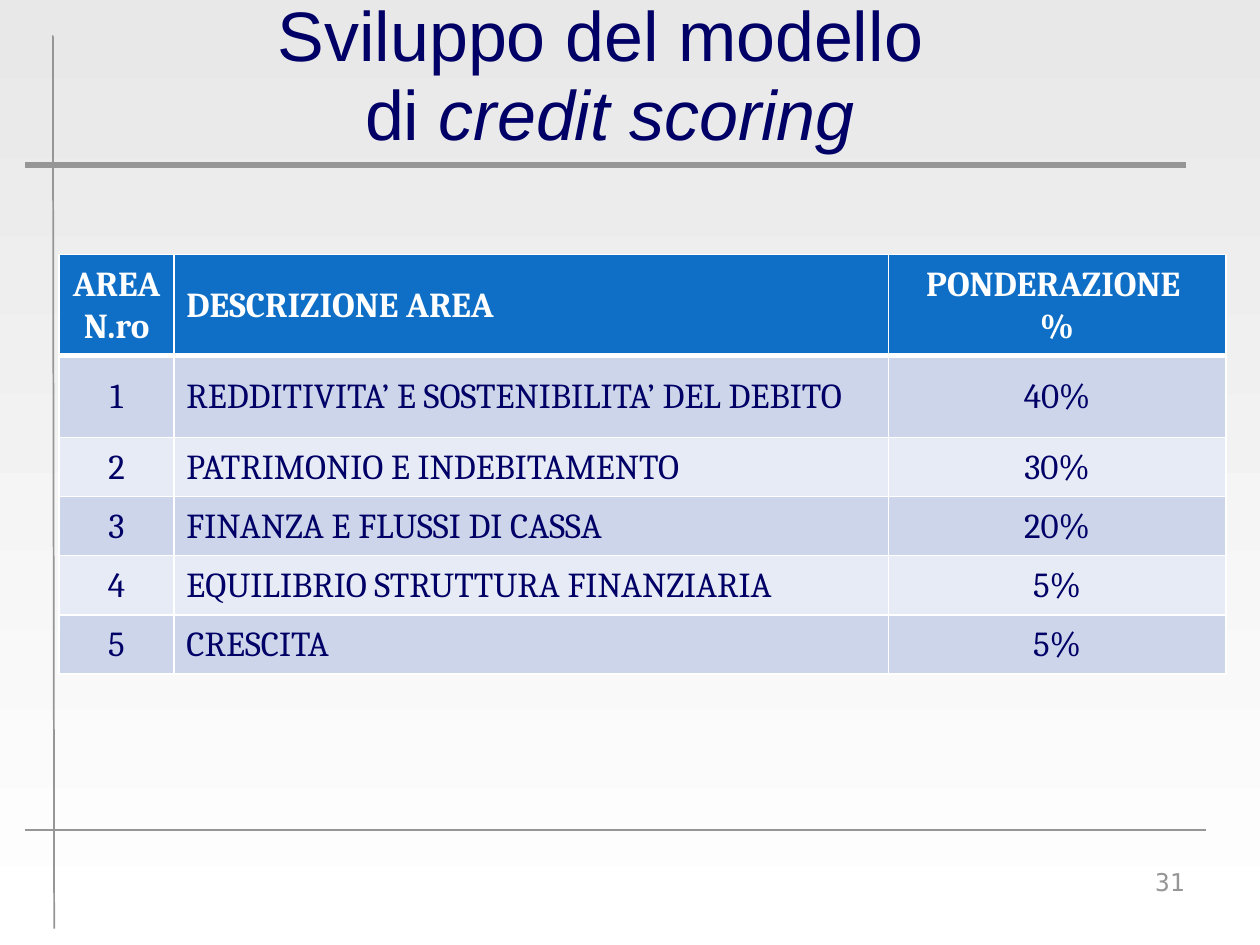
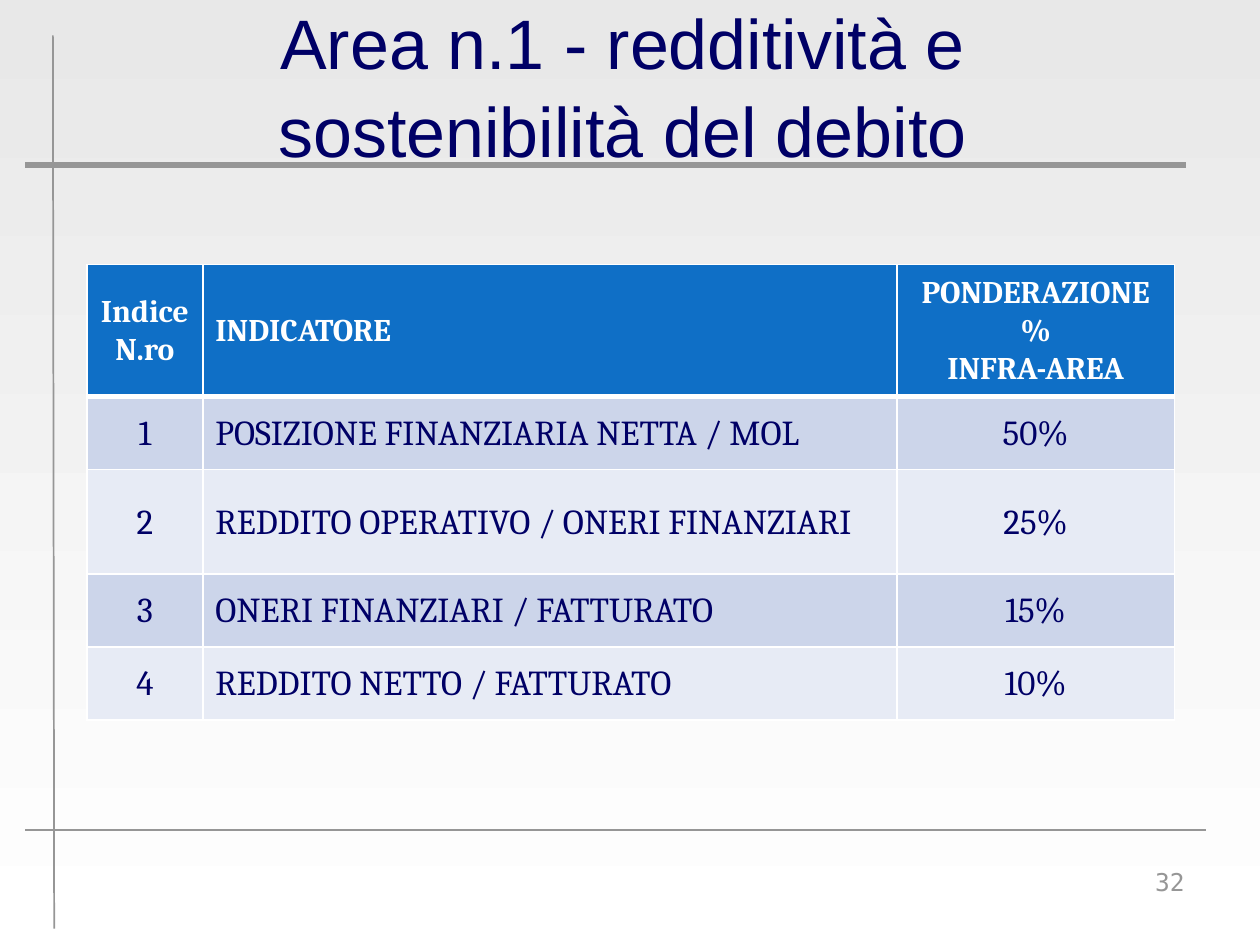
"""Build two slides on the credit scoring model: areas and indicators with their weights."""
import pptx
import pptx.dml.color
import pptx.enum.shapes
import pptx.enum.text
import pptx.oxml
import pptx.oxml.ns
import pptx.util

Inches = pptx.util.Inches
Pt = pptx.util.Pt
RGBColor = pptx.dml.color.RGBColor
Align = pptx.enum.text.PP_ALIGN
Anchor = pptx.enum.text.MSO_ANCHOR

NAVY = RGBColor(0x00, 0x00, 0x66)
GREY = RGBColor(0x96, 0x96, 0x96)
WHITE = RGBColor(0xFF, 0xFF, 0xFF)
PALE_GREY = RGBColor(0xE8, 0xE8, 0xE8)
HEADER_BLUE = RGBColor(0x0F, 0x6F, 0xC6)
BANDS = [RGBColor(0xCC, 0xD5, 0xEA), RGBColor(0xE7, 0xEB, 0xF5)]

TITLE_FONT = "Arial"
TABLE_FONT = "Cambria"
NUMBER_FONT = "DejaVu Sans Mono"
BODY_SIZE = 20
COLUMN_ALIGNMENTS = [Align.CENTER, Align.JUSTIFY, Align.CENTER]
FRAME_LINES = [
    (0.2, 1.31, 9.41, 1.31, 3),
    (0.2, 6.59, 9.57, 6.59, 1),
    (0.43, 7.37, 0.42, 0.28, 1),
]

AREAS = [
    ["AREA N.ro", "DESCRIZIONE AREA", "PONDERAZIONE \n%"],
    ["1", "REDDITIVITA’ E SOSTENIBILITA’ DEL DEBITO", "40%"],
    ["2", "PATRIMONIO E INDEBITAMENTO", "30%"],
    ["3", "FINANZA E FLUSSI DI CASSA", "20%"],
    ["4", "EQUILIBRIO STRUTTURA FINANZIARIA", "5%"],
    ["5", "CRESCITA", "5%"],
]
INDICATORS = [
    ["Indice N.ro", "INDICATORE", "PONDERAZIONE %\nINFRA-AREA"],
    ["1", "POSIZIONE FINANZIARIA NETTA / MOL", "50%"],
    ["2", "REDDITO OPERATIVO / ONERI FINANZIARI", "25%"],
    ["3", "ONERI FINANZIARI / FATTURATO", "15%"],
    ["4", "REDDITO NETTO / FATTURATO", "10%"],
]


def style_font(font, name, size, color, bold=False):
    """Set the typeface, size, colour and weight of a font."""
    font.name = name
    font.size = Pt(size)
    font.color.rgb = color
    font.bold = bold


def add_line(page, left, top, right, bottom, width):
    """Draw one grey line of the page frame."""
    line = page.shapes.add_connector(
        pptx.enum.shapes.MSO_CONNECTOR.STRAIGHT,
        Inches(left), Inches(top), Inches(right), Inches(bottom))
    line.line.color.rgb = GREY
    line.line.width = Pt(width)
    line._element.spPr.append(pptx.oxml.parse_xml(
        f'<a:effectLst {pptx.oxml.ns.nsdecls("a")}/>'))


def add_text_box(page, left, top, width, height):
    """Add an empty wrapping text box."""
    box = page.shapes.add_textbox(Inches(left), Inches(top), Inches(width), Inches(height))
    box.text_frame.word_wrap = True
    return box


def add_page(deck, number):
    """Add a page with the shared gradient, frame lines and page number."""
    page = deck.slides.add_slide(deck.slide_layouts[6])
    fill = page.background.fill
    fill.gradient()
    fill.gradient_angle = 270
    for stop, position, color in zip(fill.gradient_stops, (0, 1), (PALE_GREY, WHITE)):
        stop.position = position
        stop.color.rgb = color
    for frame_line in FRAME_LINES:
        add_line(page, *frame_line)
    box = add_text_box(page, 7.17, 6.83, 2.33, 0.52)
    box.text_frame.text = str(number)
    para = box.text_frame.paragraphs[0]
    para.alignment = Align.RIGHT
    style_font(para.runs[0].font, NUMBER_FONT, 14, GREY)
    return page


def add_title(page, place, text, line_spacing, italic_text=""):
    """Add the centred title, with an optional italic ending."""
    frame = add_text_box(page, *place).text_frame
    frame.vertical_anchor = Anchor.MIDDLE
    frame.margin_bottom = Inches(0.68)
    frame.text = text
    para = frame.paragraphs[0]
    para.alignment = Align.CENTER
    para.line_spacing = line_spacing
    if italic_text:
        span = para.add_run()
        span.text = italic_text
        span.font.italic = True
    for span in para.runs:
        style_font(span.font, TITLE_FONT, 40, NAVY)


def set_borders(cell, top_width, bottom_width):
    """Give a cell white borders."""
    properties = cell._tc.get_or_add_tcPr()
    for side, width in zip("LRTB", (1, 1, top_width, bottom_width)):
        properties.append(pptx.oxml.parse_xml(
            f'<a:ln{side} {pptx.oxml.ns.nsdecls("a")} w="{Pt(width)}">'
            f'<a:solidFill><a:srgbClr val="{WHITE}"/></a:solidFill></a:ln{side}>'))


def fill_cell(cell, text, row, alignment, header_size):
    """Write and format one table cell according to its row."""
    is_header = row == 0
    set_borders(cell, 3 if row == 1 else 1, 3 if is_header else 1)
    cell.fill.solid()
    cell.fill.fore_color.rgb = HEADER_BLUE if is_header else BANDS[(row - 1) % 2]
    cell.vertical_anchor = Anchor.MIDDLE
    cell.text_frame.text = text
    for para in cell.text_frame.paragraphs:
        para.alignment = alignment
        para.line_spacing = 1.05
        for span in para.runs:
            style_font(span.font, TABLE_FONT, header_size if is_header else BODY_SIZE,
                       WHITE if is_header else NAVY, is_header)


def add_weight_table(page, left, top, widths, heights, rows, header_size):
    """Add a banded table of numbered entries and their weights."""
    table = page.shapes.add_table(
        len(rows), len(widths), Inches(left), Inches(top),
        Inches(sum(widths)), Inches(sum(heights))).table
    for column, width in zip(table.columns, widths):
        column.width = Inches(width)
    for row, (height, texts) in enumerate(zip(heights, rows)):
        table.rows[row].height = Inches(height)
        for column, text in enumerate(texts):
            fill_cell(table.cell(row, column), text, row,
                      COLUMN_ALIGNMENTS[column], header_size)


def main():
    """Build the deck and save it."""
    deck = pptx.Presentation()
    deck.slide_width = Inches(10)
    deck.slide_height = Inches(7.5)

    page = add_page(deck, 31)
    add_title(page, (0.43, 0.4, 8.82, 1.06), "Sviluppo del modello \vdi ", 0.94,
              "credit scoring")
    add_weight_table(page, 0.47, 2.02, [0.91, 5.67, 2.68],
                     [0.78, 0.65] + [0.47] * 4, AREAS, 20)

    page = add_page(deck, 32)
    add_title(page, (0.69, 0.33, 8.5, 1.3),
              "Area n.1 - redditività e sostenibilità del debito", 1.04)
    add_weight_table(page, 0.69, 2.1, [0.92, 5.51, 2.2],
                     [1, 0.58, 0.83, 0.58, 0.58], INDICATORS, 18)

    deck.save("out.pptx")


if __name__ == "__main__":
    main()
